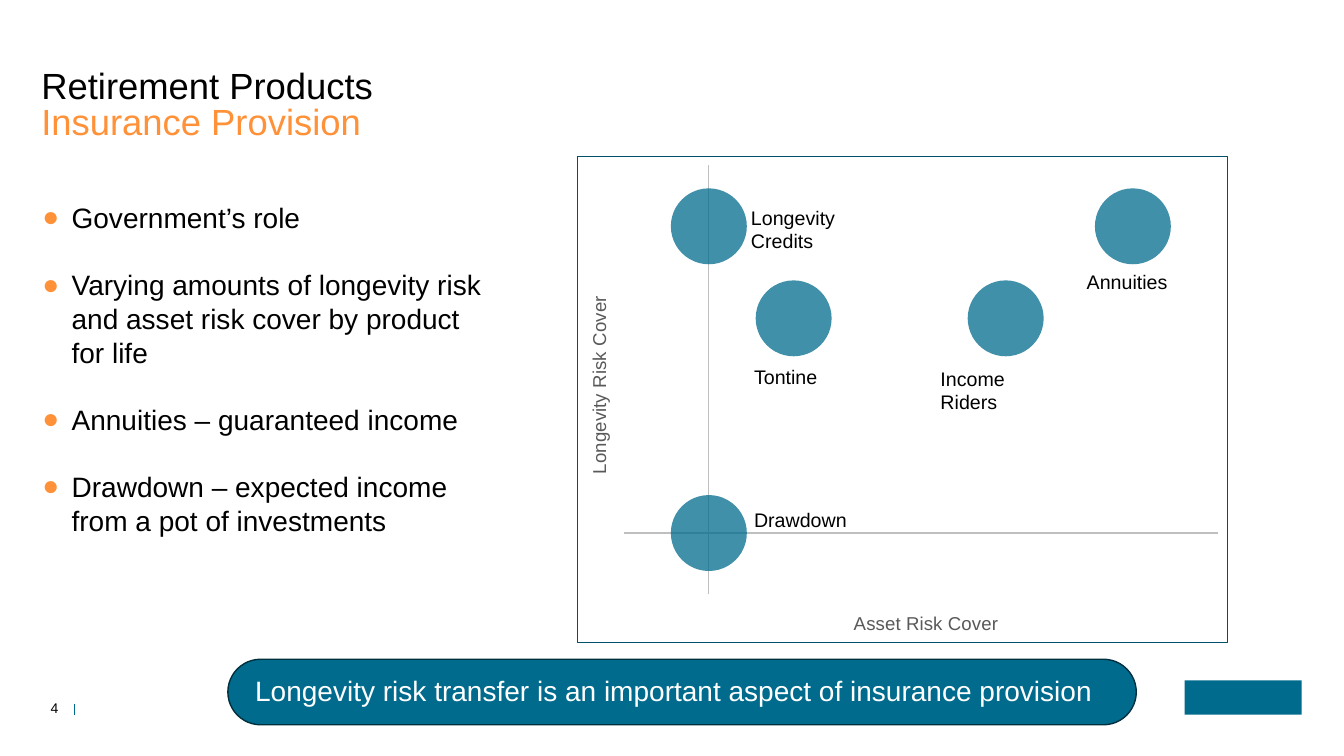
from dataclasses import dataclass
from typing import Any, Optional

from lxml.etree import SubElement
from pptx import Presentation
from pptx.chart.data import BubbleChartData
from pptx.dml.color import RGBColor
from pptx.enum.chart import XL_CHART_TYPE, XL_TICK_LABEL_POSITION, XL_TICK_MARK
from pptx.enum.shapes import MSO_CONNECTOR, MSO_SHAPE
from pptx.enum.text import MSO_ANCHOR, PP_ALIGN
from pptx.oxml import parse_xml
from pptx.oxml.ns import nsdecls, qn
from pptx.util import Inches, Pt


@dataclass(frozen=True)
class Theme:
    font: str = "Arial"
    black: str = "000000"
    white: str = "FFFFFF"
    orange: str = "FF9138"
    teal: str = "006B8D"
    pill_line: str = "002F3E"
    border: str = "00506A"
    axis: str = "BFBFBF"
    axis_text: str = "595959"
    title: float = 26
    body: float = 20
    label: float = 14
    axis_title: float = 13.3
    number: float = 10


@dataclass(frozen=True)
class Label:
    text: str
    left: float
    top: float
    width: float = 1.18
    height: float = 0.34


@dataclass(frozen=True)
class Bubble:
    x: float
    y: float
    size: float = 2


@dataclass(frozen=True)
class AxisSpec:
    title: str
    low: float
    high: float
    left: float
    top: float
    rotation: int = 0


T = Theme()
HEADINGS = [
    (Label("Retirement Products", 0.41, 0.68, 12.52, 0.39), T.black),
    (Label("Insurance Provision", 0.41, 1.03, 12.52, 0.39), T.orange),
]
BULLETS = [
    "Government’s role",
    "Varying amounts of longevity risk and asset risk cover by product for life",
    "Annuities – guaranteed income",
    "Drawdown – expected income from a pot of investments",
]
BUBBLES = [Bubble(1, 10), Bubble(0, 0), Bubble(0.2, 7), Bubble(0.7, 7),
           Bubble(0, 10), Bubble(10, 100, 4)]
AXES = [
    AxisSpec("Asset Risk Cover", -0.2, 1.2, 0.42, 0.93),
    AxisSpec("Longevity Risk Cover", -2, 12, 0.01, 0.28, -5400000),
]
PRODUCTS = [
    Label("Drawdown", 7.38, 4.99),
    Label("Income Riders", 9.23, 3.59, 1.4, 0.57),
    Label("Tontine", 7.38, 3.57),
    Label("Longevity Credits", 7.35, 1.99, height=0.57),
    Label("Annuities", 10.68, 2.63),
]


def rgb(value: str) -> RGBColor:
    return RGBColor.from_string(value)


def style(font: Any, size: float, color: str) -> None:
    font.name = T.font
    font.size = Pt(size)
    font.color.rgb = rgb(color)


def set_insets(tf: Any, x: float, y: float, right: Optional[float] = None) -> None:
    tf.margin_left = Inches(x)
    tf.margin_right = Inches(x if right is None else right)
    tf.margin_top = tf.margin_bottom = Inches(y)


def add_label(s: Any, label: Label, size: float, color: str) -> Any:
    tf = s.shapes.add_textbox(Inches(label.left), Inches(label.top),
                              Inches(label.width), Inches(label.height)).text_frame
    tf.word_wrap = True
    tf.text = label.text
    for p in tf.paragraphs:
        for r in p.runs:
            style(r.font, size, color)
    return tf


def add_bullets(s: Any) -> None:
    tf = add_label(s, Label("\n".join(BULLETS), 0.42, 1.99, 4.45, 3.7), T.body, T.black)
    set_insets(tf, 0, 0)
    for p in tf.paragraphs:
        p.line_spacing = p.space_after = Pt(24)
        pPr = p._p.get_or_add_pPr()
        pPr.set("marL", str(Inches(0.29)))
        pPr.set("indent", str(-Inches(0.29)))
        color = SubElement(pPr, qn("a:buClr"))
        SubElement(color, qn("a:srgbClr"), val=T.orange)
        SubElement(pPr, qn("a:buFont"), typeface=T.font)
        SubElement(pPr, qn("a:buChar"), char="●")


def set_layout(parent: Any, index: int, **values: Any) -> None:
    for old in parent.findall(qn("c:layout")):
        parent.remove(old)
    layout = parse_xml(f"<c:layout {nsdecls('c')}><c:manualLayout/></c:layout>")
    for name, value in values.items():
        SubElement(layout[0], qn(f"c:{name}"), val=str(value))
    parent.insert(index, layout)


def format_axis(axis: Any, spec: AxisSpec) -> None:
    axis.minimum_scale, axis.maximum_scale = spec.low, spec.high
    axis.has_major_gridlines = False
    axis.major_tick_mark = axis.minor_tick_mark = XL_TICK_MARK.NONE
    axis.tick_label_position = XL_TICK_LABEL_POSITION.NONE
    axis.format.line.color.rgb = rgb(T.axis)
    axis.format.line.width = Pt(0.75)
    tf = axis.axis_title.text_frame
    tf.text = spec.title
    r = tf.paragraphs[0].runs[0]
    style(r.font, T.axis_title, T.axis_text)
    r.font.bold = False
    title = axis.axis_title._element
    body = title.find(f".//{qn('a:bodyPr')}")
    body.set("rot", str(spec.rotation))
    body.set("vert", "horz")
    set_layout(title, 1, xMode="edge", yMode="edge", x=spec.left, y=spec.top)


def add_risk_chart(s: Any) -> None:
    data = BubbleChartData()
    series = data.add_series("Series 1")
    for b in BUBBLES:
        series.add_data_point(b.x, b.y, b.size)
    chart = s.shapes.add_chart(XL_CHART_TYPE.BUBBLE, Inches(5.72), Inches(1.55),
                               Inches(6.46), Inches(4.83), data).chart
    chart.has_legend = chart.has_title = False
    style(chart.font, T.number, T.black)
    bubbles = chart.plots[0].series[0]
    fill = bubbles.format.fill
    fill.solid()
    fill.fore_color.rgb = rgb(T.teal)
    bubbles.format.line.fill.background()
    color = bubbles._element.find(f".//{qn('a:srgbClr')}")
    SubElement(color, qn("a:alpha"), val="75000")
    for axis, spec in zip((chart.category_axis, chart.value_axis), AXES):
        format_axis(axis, spec)
    space = chart._chartSpace
    space.find(f".//{qn('c:varyColors')}").set("val", "0")
    set_layout(space.find(f".//{qn('c:plotArea')}"), 0, layoutTarget="inner",
               xMode="edge", yMode="edge", x=0.072, y=0.017, w=0.913, h=0.884)
    space.find(qn("c:chart")).addnext(parse_xml(
        f'<c:spPr {nsdecls("c", "a")}><a:noFill/><a:ln w="{Pt(0.75)}"><a:solidFill>'
        f'<a:srgbClr val="{T.border}"/></a:solidFill></a:ln></c:spPr>'))


def add_block(s: Any, kind: MSO_SHAPE, box: tuple[float, ...]) -> Any:
    sp = s.shapes.add_shape(kind, *map(Inches, box))
    sp.shadow.inherit = False
    sp.fill.solid()
    sp.fill.fore_color.rgb = rgb(T.teal)
    sp.line.fill.background()
    return sp


def add_message(s: Any) -> None:
    sp = add_block(s, MSO_SHAPE.ROUNDED_RECTANGLE, (2.26, 6.54, 9.01, 0.65))
    sp.adjustments[0] = 0.5
    sp.line.color.rgb = rgb(T.pill_line)
    sp.line.width = Pt(1)
    tf = sp.text_frame
    tf.word_wrap = False
    tf.vertical_anchor = MSO_ANCHOR.MIDDLE
    set_insets(tf, 0.16, 0.08, 0.32)
    tf.text = "Longevity risk transfer is an important aspect of insurance provision"
    p = tf.paragraphs[0]
    p.alignment = PP_ALIGN.CENTER
    p.line_spacing = 0.9
    style(p.runs[0].font, T.body, T.white)


def add_footer(s: Any) -> None:
    add_block(s, MSO_SHAPE.RECTANGLE, (11.75, 6.75, 1.16, 0.34))
    rule = s.shapes.add_connector(MSO_CONNECTOR.STRAIGHT, Inches(0.74), Inches(6.98),
                                  Inches(0.74), Inches(7.09))
    rule.line.color.rgb = rgb(T.teal)
    rule.line.width = Pt(1)
    SubElement(rule._element.spPr, qn("a:effectLst"))
    tf = add_label(s, Label("4", 0.29, 6.94, 0.33, 0.17), T.number, T.black)
    set_insets(tf, 0.04, 0)
    tf.vertical_anchor = MSO_ANCHOR.MIDDLE
    tf.paragraphs[0].alignment = PP_ALIGN.RIGHT


def main() -> None:
    prs = Presentation()
    prs.slide_width, prs.slide_height = Inches(13.33), Inches(7.5)
    s = prs.slides.add_slide(prs.slide_layouts[6])
    add_footer(s)
    for label, color in HEADINGS:
        tf = add_label(s, label, T.title, color)
        set_insets(tf, 0, 0)
        tf.paragraphs[0].line_spacing = 0.9
    add_bullets(s)
    add_risk_chart(s)
    for label in PRODUCTS:
        add_label(s, label, T.label, T.black)
    add_message(s)
    prs.save("out.pptx")


if __name__ == "__main__":
    main()
